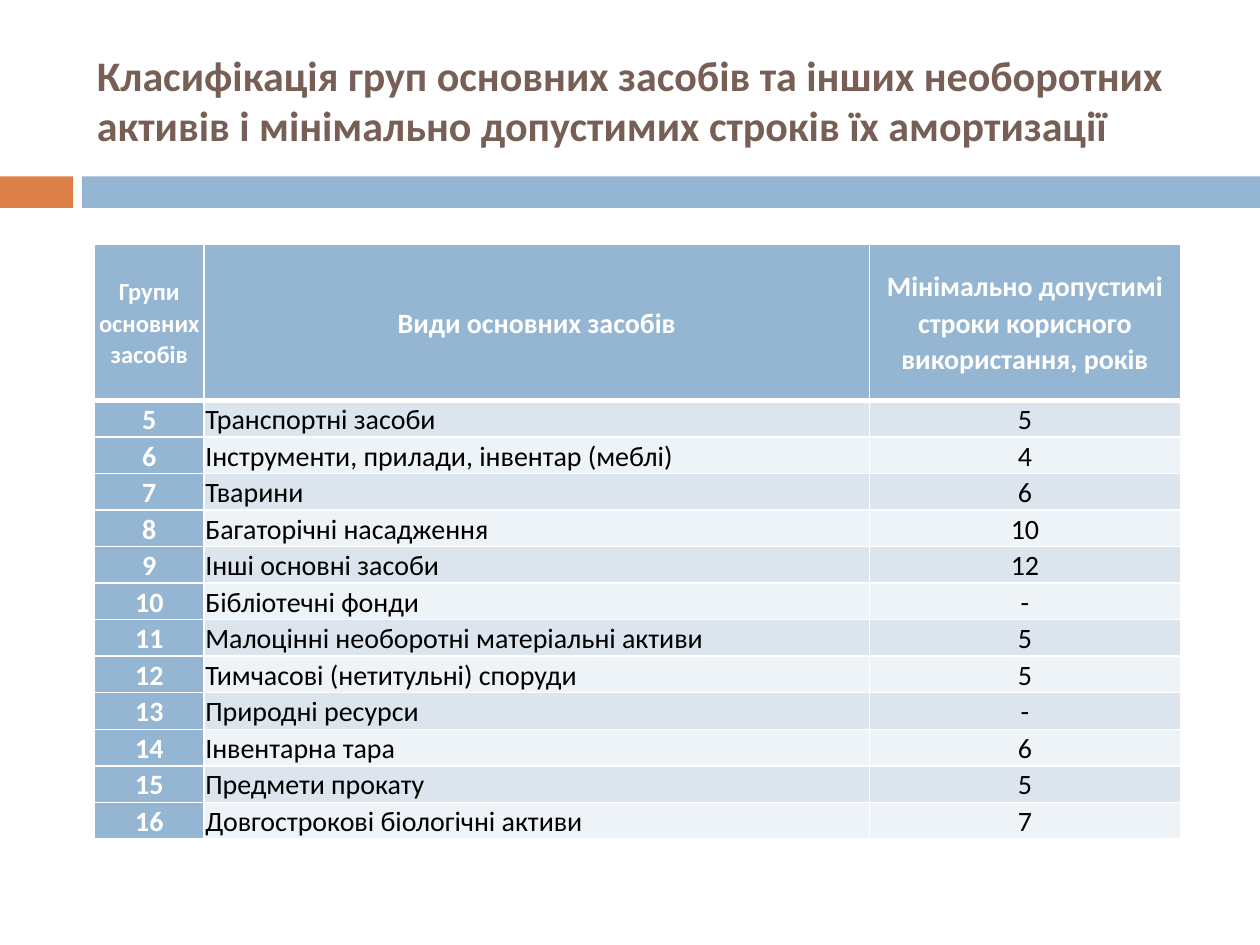
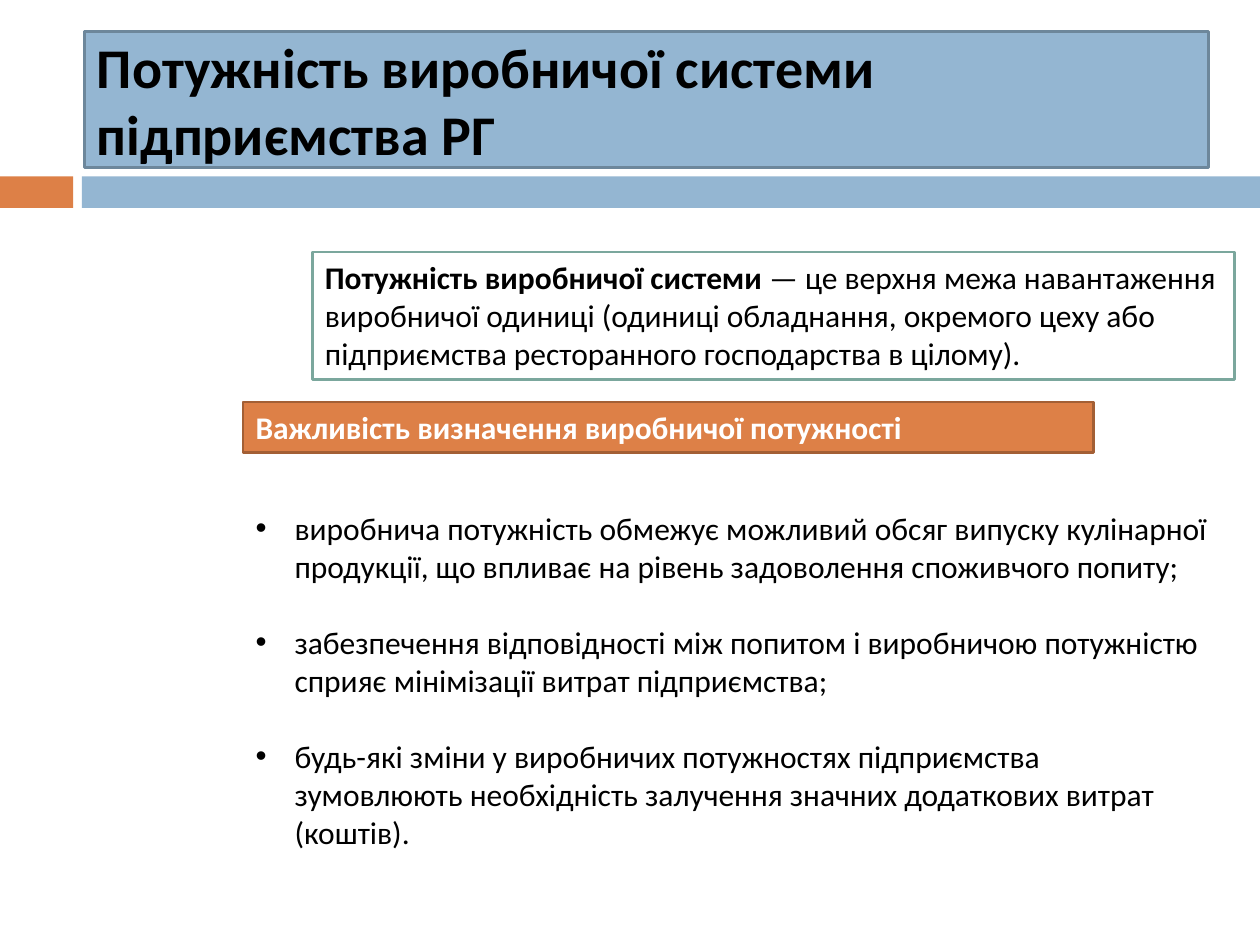
from pptx import Presentation
from pptx.dml.color import RGBColor
from pptx.enum.shapes import MSO_SHAPE
from pptx.enum.text import MSO_ANCHOR, PP_ALIGN
from pptx.oxml.ns import qn
from pptx.util import Pt
from lxml.etree import SubElement

PX = 9144
FONT = "Calibri"
COLORS = {
    "blue": "94B6D2", "blue_edge": "6D879B", "orange": "DD8047",
    "orange_edge": "A35F35", "green_edge": "7BA79D", "brown": "775F55",
    "band_dark": "DCE5EE", "band_light": "EEF3F7",
    "white": "FFFFFF", "black": "000000",
}
TITLE_AREA = (67, 25, 892, 108)
COLUMN_WIDTHS = (87, 528, 247)
HEADER_HEIGHT, ROW_HEIGHT = 124, 29
HEADERS = (
    "Групи\nосновних засобів",
    "Види основних засобів",
    "Мінімально допустимі строки корисного використання, років",
)
FIRST_GROUP = 5
ASSETS = (
    ("Транспортні засоби", "5"),
    ("Інструменти, прилади, інвентар (меблі)", "4"),
    ("Тварини", "6"),
    ("Багаторічні насадження", "10"),
    ("Інші основні засоби", "12"),
    ("Бібліотечні фонди", "-"),
    ("Малоцінні необоротні матеріальні активи", "5"),
    ("Тимчасові (нетитульні) споруди", "5"),
    ("Природні ресурси", "-"),
    ("Інвентарна тара", "6"),
    ("Предмети прокату", "5"),
    ("Довгострокові біологічні активи", "7"),
)
REASONS = (
    "виробнича потужність обмежує можливий обсяг випуску кулінарної продукції, "
    "що впливає на рівень задоволення споживчого попиту;",
    "забезпечення відповідності між попитом і виробничою потужністю "
    "сприяє мінімізації витрат підприємства;",
    "будь-які зміни у виробничих потужностях підприємства зумовлюють "
    "необхідність залучення значних додаткових витрат (коштів).",
)


def rgb(name):
    """Return the named colour."""
    return RGBColor.from_string(COLORS[name])


class Deck:
    """Holds the presentation style and the current slide."""

    def __init__(self):
        self.presentation = Presentation()
        self.presentation.slide_width = 1000 * PX
        self.presentation.slide_height = 750 * PX
        self.slide = None

    def new_slide(self):
        """Start a slide with its two-part band."""
        self.slide = self.presentation.slides.add_slide(self.presentation.slide_layouts[6])
        self.box((0, 140, 58, 25), "orange")
        self.box((65, 140, 935, 25), "blue")

    def box(self, area, fill, edge=None):
        """Add a rectangle with an optional outline."""
        shape = self.slide.shapes.add_shape(MSO_SHAPE.RECTANGLE, *(n * PX for n in area))
        shape.shadow.inherit = False
        shape.fill.solid()
        shape.fill.fore_color.rgb = rgb(fill)
        if edge:
            shape.line.color.rgb = rgb(edge)
            shape.line.width = Pt(1.5)
        else:
            shape.line.fill.background()
        return shape

    def text_box(self, area):
        """Add an empty text box."""
        return self.slide.shapes.add_textbox(*(n * PX for n in area))

    def set_text(self, shape, text, size, color="black", bold=False,
                 anchor=MSO_ANCHOR.TOP, align=PP_ALIGN.LEFT):
        """Fill a shape or cell with text and style its runs."""
        frame = shape.text_frame
        frame.text = text
        frame.word_wrap = True
        frame.vertical_anchor = anchor
        for paragraph in frame.paragraphs:
            paragraph.alignment = align
            for run in paragraph.runs:
                self.style_run(run, size, color, bold)
        return frame.paragraphs

    def style_run(self, run, size, color, bold):
        """Apply the font to one run."""
        run.font.name = FONT
        run.font.size = Pt(size)
        run.font.bold = bold
        run.font.color.rgb = rgb(color)

    def title(self, shape, text, size, color):
        """Set the slide title in a shape."""
        self.set_text(shape, text, size, color, True, MSO_ANCHOR.MIDDLE)

    def bullets(self, area, items, size, gap):
        """Add a bulleted list."""
        paragraphs = self.set_text(self.text_box(area), "\n".join(items), size)
        for index, paragraph in enumerate(paragraphs):
            paragraph.space_before = Pt(gap if index else 0)
            properties = paragraph._p.get_or_add_pPr()
            properties.set("marL", str(31 * PX))
            properties.set("indent", str(-31 * PX))
            SubElement(properties, qn("a:buFont"), typeface="Arial")
            SubElement(properties, qn("a:buChar"), char="•")

    def cell(self, cell, text, fill, size=16, color="black", bold=False,
             align=PP_ALIGN.CENTER, top=1, bottom=1):
        """Fill and style one table cell with white borders."""
        cell.margin_left = cell.margin_right = PX
        cell.margin_top = cell.margin_bottom = 0
        for paragraph in self.set_text(cell, text, size, color, bold, align=align):
            paragraph.line_spacing = 1.07
        cell.vertical_anchor = MSO_ANCHOR.MIDDLE
        properties = cell._tc.get_or_add_tcPr()
        for side, width in (("L", 1), ("R", 1), ("T", top), ("B", bottom)):
            line = SubElement(properties, qn(f"a:ln{side}"), w=str(Pt(width)))
            SubElement(SubElement(line, qn("a:solidFill")), qn("a:srgbClr"), val=COLORS["white"])
        cell.fill.solid()
        cell.fill.fore_color.rgb = rgb(fill)

    def asset_table(self, left, top):
        """Add the table of asset groups and service lives."""
        height = HEADER_HEIGHT + ROW_HEIGHT * len(ASSETS)
        area = (left, top, sum(COLUMN_WIDTHS), height)
        table = self.slide.shapes.add_table(
            len(ASSETS) + 1, len(COLUMN_WIDTHS), *(n * PX for n in area)).table
        table.horz_banding = False
        for column, width in zip(table.columns, COLUMN_WIDTHS):
            column.width = width * PX
        for index, row in enumerate(table.rows):
            row.height = (ROW_HEIGHT if index else HEADER_HEIGHT) * PX
        for column, header in enumerate(HEADERS):
            self.cell(table.cell(0, column), header, "blue", 16 if column else 14,
                      "white", True, bottom=3)
        for row, (asset, years) in enumerate(ASSETS, 1):
            band = "band_dark" if row % 2 else "band_light"
            top_width = 3 if row == 1 else 1
            self.cell(table.cell(row, 0), str(FIRST_GROUP + row - 1), "blue",
                      color="white", bold=True, top=top_width)
            self.cell(table.cell(row, 1), asset, band, align=PP_ALIGN.LEFT, top=top_width)
            self.cell(table.cell(row, 2), years, band, top=top_width)


def classification_slide(deck):
    """Build the asset classification slide."""
    deck.new_slide()
    deck.title(deck.text_box(TITLE_AREA),
               "Класифікація груп основних засобів та інших необоротних активів "
               "і мінімально допустимих строків їх амортизації", 24, "brown")
    deck.asset_table(75, 194)


def capacity_slide(deck):
    """Build the production capacity slide."""
    deck.new_slide()
    deck.title(deck.box(TITLE_AREA, "blue", "blue_edge"),
               "Потужність виробничої системи підприємства РГ", 32, "black")
    definition = deck.box((248, 200, 732, 101), "white", "green_edge")
    paragraph = deck.set_text(definition, "Потужність виробничої системи", 18, bold=True)[0]
    explanation = paragraph.add_run()
    explanation.text = (" — це верхня межа навантаження виробничої одиниці (одиниці обладнання, "
                        "окремого цеху або підприємства ресторанного господарства в цілому).")
    deck.style_run(explanation, 18, "black", False)
    importance = deck.box((193, 319, 675, 40), "orange", "orange_edge")
    deck.set_text(importance, "Важливість визначення виробничої потужності", 18, "white", True)
    deck.bullets((193, 399, 776, 313), REASONS, 18, 22)


def main():
    """Build and save the slides."""
    deck = Deck()
    classification_slide(deck)
    capacity_slide(deck)
    deck.presentation.save("out.pptx")


if __name__ == "__main__":
    main()
